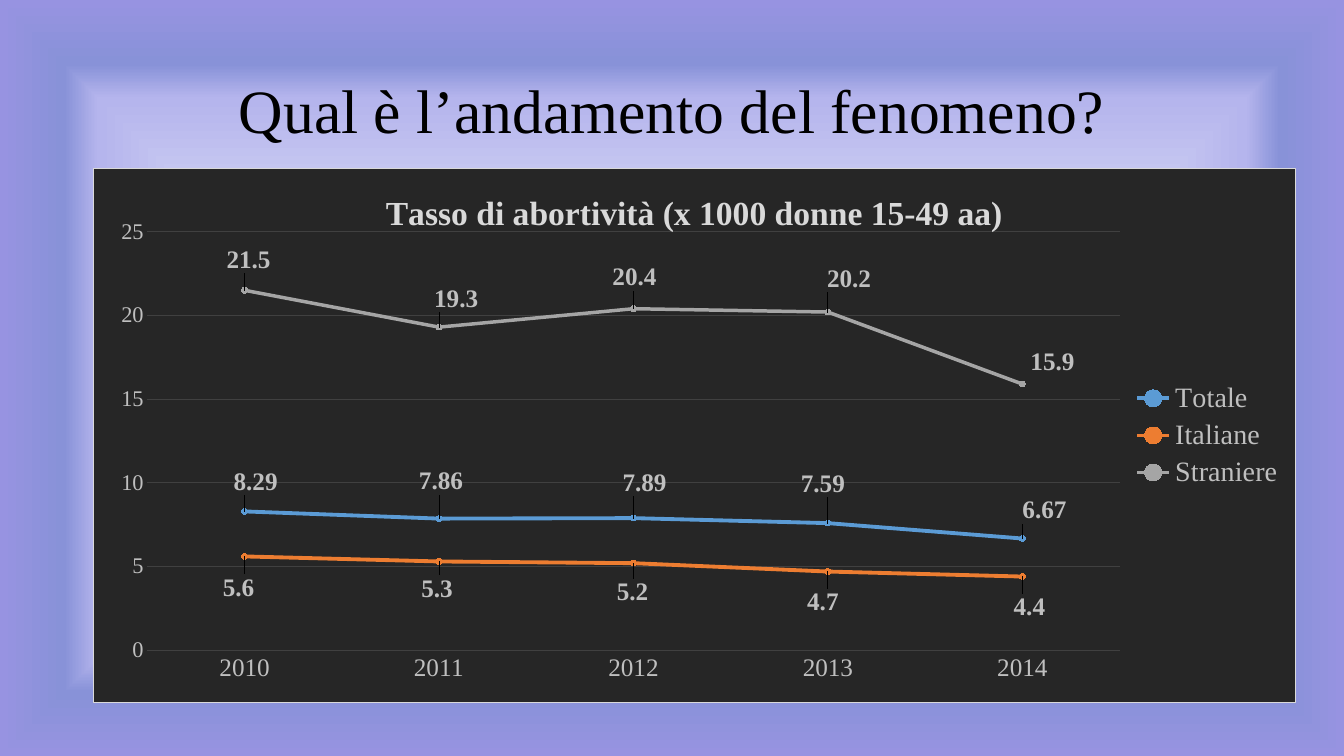
from pptx import Presentation
from pptx.chart.data import CategoryChartData
from pptx.dml.color import RGBColor
from pptx.enum.chart import (XL_CHART_TYPE, XL_LABEL_POSITION, XL_LEGEND_POSITION,
                             XL_MARKER_STYLE, XL_TICK_MARK)
from pptx.enum.text import MSO_ANCHOR, PP_ALIGN
from pptx.oxml import parse_xml
from pptx.oxml.ns import nsdecls, qn
from pptx.util import Inches, Pt

LINE_CHART = XL_CHART_TYPE.LINE_MARKERS
LABEL_CENTER = XL_LABEL_POSITION.CENTER
LEGEND_RIGHT = XL_LEGEND_POSITION.RIGHT
CIRCLE = XL_MARKER_STYLE.CIRCLE
NO_TICK = XL_TICK_MARK.NONE
MIDDLE, CENTER = MSO_ANCHOR.MIDDLE, PP_ALIGN.CENTER

THEME = {
    "font": "Times New Roman",
    "ink": "000000", "panel": "262626", "border": "D9D9D9", "grid": "404040",
    "chart_title": "D9D9D9", "chart_text": "BFBFBF",
    "background": [(0, "F7FAFD"), (74, "B5B5ED"), (83, "8892D8"), (100, "9793E1")],
    "title_size": 44, "chart_title_size": 24, "legend_size": 20,
    "label_size": 18, "category_size": 18, "value_size": 16, "base_size": 10,
}
WIDTH, HEIGHT = 13.33, 7.5
LEFT = 0.92
CHART_WIDTH, CHART_HEIGHT = 11.93, 5.3

YEARS = ["2010", "2011", "2012", "2013", "2014"]
# name, values, line colour, marker colour, line width, label offsets from points in inches
SERIES = [
    ("Totale", [8.29, 7.86, 7.89, 7.59, 6.67], "5B9BD5", "9DC3E6", 2.75,
     [(0.11, -0.29), (0.02, -0.37), (0.11, -0.35), (-0.05, -0.39), (0.22, -0.28)]),
    ("Italiane", [5.6, 5.3, 5.2, 4.7, 4.4], "ED7D31", "F4B183", 2.75,
     [(-0.06, 0.31), (-0.02, 0.27), (-0.01, 0.29), (-0.05, 0.3), (0.07, 0.3)]),
    ("Straniere", [21.5, 19.3, 20.4, 20.2, 15.9], "A5A5A5", "C9C9C9", 2.5,
     [(0.04, -0.3), (0.17, -0.28), (0.01, -0.31), (0.21, -0.33), (0.3, -0.22)]),
]


def style_font(font, size, color, bold=False):
    font.name = THEME["font"]
    font.size = Pt(size)
    font.bold = bold
    font.color.rgb = RGBColor.from_string(color)


def manual_layout(settings):
    parts = "".join(f'<c:{tag} val="{value}"/>' for tag, value in settings)
    return parse_xml(f'<c:layout {nsdecls("c")}><c:manualLayout>{parts}'
                     '</c:manualLayout></c:layout>')


deck = Presentation()
deck.slide_width, deck.slide_height = Inches(WIDTH), Inches(HEIGHT)
page = deck.slides.add_slide(deck.slide_layouts[6])

# Background gradient, spreading from the centre
stops = "".join(f'<a:gs pos="{share * 1000}"><a:srgbClr val="{color}"/></a:gs>'
                for share, color in THEME["background"])
page.element.find(qn("p:cSld")).insert(0, parse_xml(
    f'<p:bg {nsdecls("p", "a")}><p:bgPr><a:gradFill rotWithShape="1"><a:gsLst>{stops}</a:gsLst>'
    '<a:path path="shape"><a:fillToRect l="50000" t="50000" r="50000" b="50000"/></a:path>'
    '</a:gradFill><a:effectLst/></p:bgPr></p:bg>'))

# Slide title
title_box = page.shapes.add_textbox(Inches(LEFT), Inches(0.4),
                                    Inches(WIDTH - 2 * LEFT), Inches(1.45))
title_frame = title_box.text_frame
title_frame.word_wrap = True
title_frame.vertical_anchor = MIDDLE
title_para = title_frame.paragraphs[0]
title_para.text = "Qual è l’andamento del fenomeno?"
title_para.alignment = CENTER
title_para.line_spacing = 0.9
style_font(title_para.font, THEME["title_size"], THEME["ink"])

# Chart
chart_data = CategoryChartData()
chart_data.categories = YEARS
for name, values, *_ in SERIES:
    chart_data.add_series(name, values)
chart = page.shapes.add_chart(LINE_CHART, Inches(LEFT), Inches(1.67), Inches(CHART_WIDTH),
                              Inches(CHART_HEIGHT), chart_data).chart
style_font(chart.font, THEME["base_size"], THEME["ink"])
chart.plots[0].vary_by_categories = False

# Chart panel and plot area
chart.element.find(qn("c:chart")).addnext(parse_xml(
    f'<c:spPr {nsdecls("c", "a")}><a:solidFill><a:srgbClr val="{THEME["panel"]}"/></a:solidFill>'
    f'<a:ln w="{Pt(0.75)}"><a:solidFill><a:srgbClr val="{THEME["border"]}"/></a:solidFill></a:ln>'
    '</c:spPr>'))
plot_area = chart.element.find(".//" + qn("c:plotArea"))
for old_layout in plot_area.findall(qn("c:layout")):
    plot_area.remove(old_layout)
plot_area.insert(0, manual_layout([
    ("layoutTarget", "inner"), ("xMode", "edge"), ("yMode", "edge"),
    ("x", 0.045), ("y", 0.118), ("w", 0.809), ("h", 0.785)]))

# Chart title and legend
chart.has_title = True
chart_title = chart.chart_title.text_frame.paragraphs[0]
chart_title.text = "Tasso di abortività (x 1000 donne 15-49 aa)"
style_font(chart_title.font, THEME["chart_title_size"], THEME["chart_title"], True)
chart.has_legend = True
chart.legend.position = LEGEND_RIGHT
chart.legend.include_in_layout = False
style_font(chart.legend.font, THEME["legend_size"], THEME["chart_text"])

# Axes
for axis, size in ((chart.category_axis, THEME["category_size"]),
                   (chart.value_axis, THEME["value_size"])):
    axis.major_tick_mark = axis.minor_tick_mark = NO_TICK
    axis.format.line.fill.background()
    style_font(axis.tick_labels.font, size, THEME["chart_text"])
value_axis = chart.value_axis
value_axis.minimum_scale, value_axis.maximum_scale, value_axis.major_unit = 0, 25, 5
grid_line = value_axis.major_gridlines.format.line
grid_line.width = Pt(0.75)
grid_line.color.rgb = RGBColor.from_string(THEME["grid"])

# Series lines, markers and labels
for series, (_, _, color, marker_color, width, offsets) in zip(chart.plots[0].series, SERIES):
    series.smooth = False
    series.format.line.width = Pt(width)
    series.format.line.color.rgb = RGBColor.from_string(color)
    series.marker.style = CIRCLE
    series.marker.size = 4
    series.marker.format.fill.solid()
    series.marker.format.fill.fore_color.rgb = RGBColor.from_string(marker_color)
    series.marker.format.line.fill.background()
    for index in range(len(offsets)):
        label = series.points[index].data_label
        style_font(label.font, THEME["label_size"], THEME["chart_text"], True)
        label.position = LABEL_CENTER

# Label places, as shares of the chart's size
all_offsets = [offset for *_, offsets in SERIES for offset in offsets]
for label_node, (across, down) in zip(chart.element.iter(qn("c:dLbl")), all_offsets):
    label_node.find(qn("c:idx")).addnext(manual_layout([
        ("x", across / CHART_WIDTH), ("y", down / CHART_HEIGHT)]))

deck.save("out.pptx")
